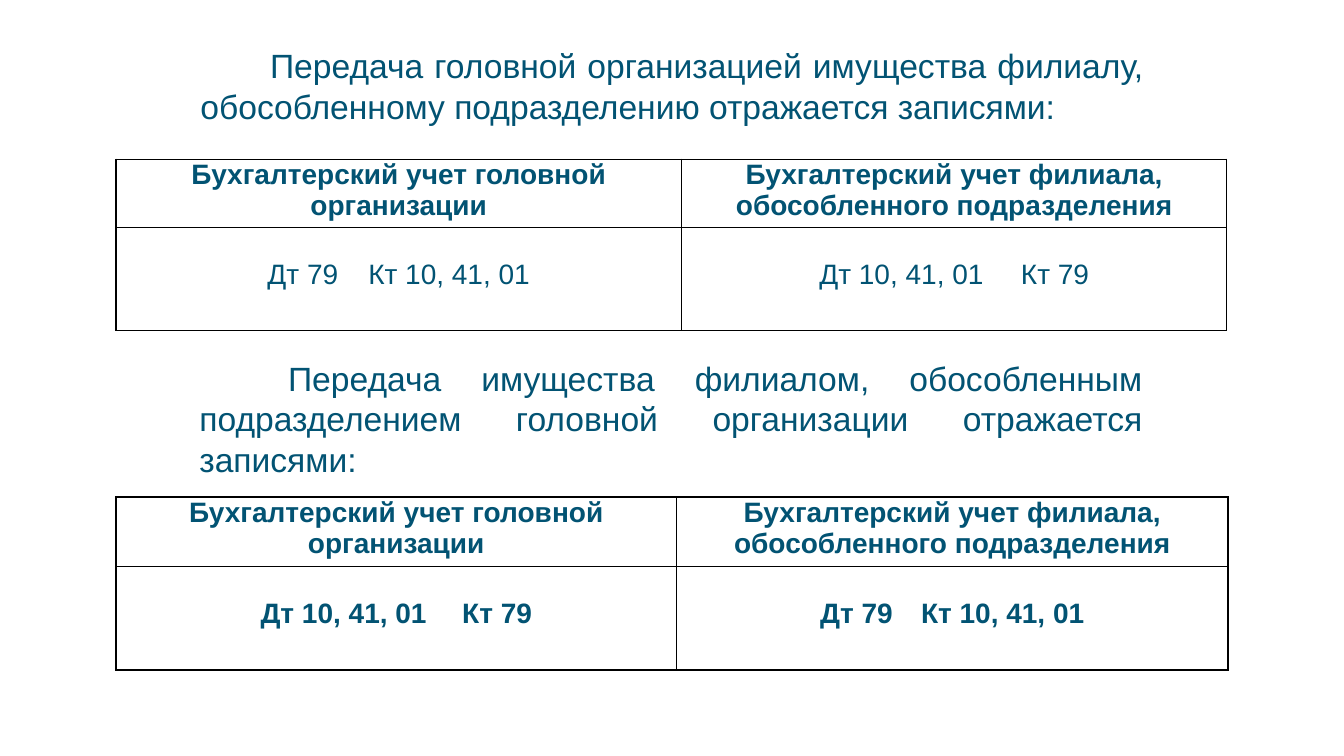
"""Build a slide on entries for property transfers between head office and branch."""
from lxml import etree
from pptx import Presentation
from pptx import util as u
from pptx.dml.color import RGBColor
from pptx.enum import text
from pptx.oxml.ns import qn

TEAL = RGBColor(0x02, 0x53, 0x73)
BLACK = RGBColor(0x00, 0x00, 0x00)

deck = Presentation()
deck.slide_width, deck.slide_height = u.Inches(13.33), u.Inches(7.5)
COLUMN, ROW = deck.slide_width / 100, deck.slide_height / 100
page = deck.slides.add_slide(deck.slide_layouts[6])


def write(para, words, size=20, bold=False, align=text.PP_ALIGN.CENTER, indent=0):
    """Fill a paragraph with one formatted run."""
    para.alignment = align
    if indent:
        para._p.get_or_add_pPr().set("indent", str(int(indent * COLUMN)))
    span = para.add_run()
    span.text = words
    span.font.name = "Arial"
    span.font.size = u.Pt(size)
    span.font.bold = bold
    span.font.color.rgb = TEAL


def add_border(cell, side, points):
    """Draw one solid border of a cell."""
    line = etree.SubElement(cell._tc.get_or_add_tcPr(), qn(f"a:ln{side}"), w=str(u.Pt(points)))
    fill = etree.SubElement(line, qn("a:solidFill"))
    etree.SubElement(fill, qn("a:srgbClr"), val=str(BLACK))


intros = [
    (14.18, 5.33, 12.13, 5.18,
     "Передача головной организацией имущества филиалу, обособленному подразделению отражается записями:"),
    (14.1, 46.67, 17.47, 6.6,
     "Передача имущества филиалом, обособленным подразделением головной организации отражается записями:"),
]
for left, top, height, indent, words in intros:
    box = page.shapes.add_textbox(
        int(left * COLUMN), int(top * ROW), int(71.64 * COLUMN), int(height * ROW))
    box.text_frame.word_wrap = True
    write(box.text_frame.paragraphs[0], words, size=24,
          align=text.PP_ALIGN.JUSTIFY, indent=indent)

headings = ["Бухгалтерский учет головной организации",
            "Бухгалтерский учет филиала, обособленного подразделения"]
head_entry, branch_entry = "Дт 79\tКт 10, 41, 01", "Дт 10, 41, 01\tКт 79"
ledgers = [
    (21.07, (42.08, 40.58), (9.07, 13.6), [head_entry, branch_entry], False, 1),
    (65.73, (41.71, 41.04), (9.2, 13.73), [branch_entry, head_entry], True, 1.5),
]
for top, widths, heights, entries, bold_entries, outline in ledgers:
    frame = page.shapes.add_table(
        2, 2, int(8.63 * COLUMN), int(top * ROW),
        int(sum(widths) * COLUMN), int(sum(heights) * ROW))
    ledger = frame.table
    ledger.first_row = ledger.horz_banding = False
    for index in range(2):
        ledger.columns[index].width = int(widths[index] * COLUMN)
        ledger.rows[index].height = int(heights[index] * ROW)
    for row, line_texts in enumerate([headings, entries]):
        for column, words in enumerate(line_texts):
            cell = ledger.cell(row, column)
            cell.margin_left = cell.margin_right = u.Inches(0.07)
            cell.margin_top = u.Inches(0.31 * row)
            cell.margin_bottom = 0
            write(cell.text_frame.paragraphs[0], words, bold=row == 0 or bold_entries)
            outer_sides = ("LR"[column], "TB"[row])
            for side in "LRTB":
                add_border(cell, side, outline if side in outer_sides else 1)
            cell.fill.background()

deck.save("out.pptx")
